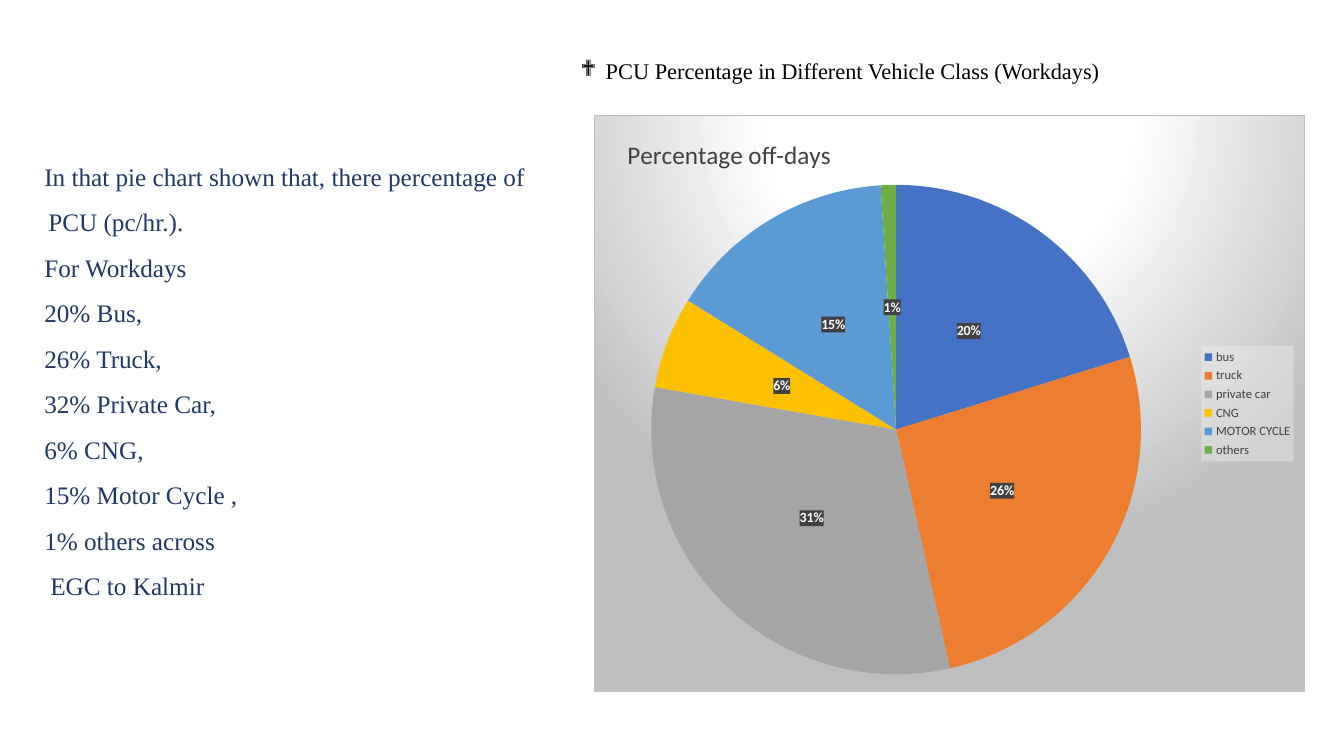
from lxml.etree import fromstring, SubElement
from pptx import Presentation
from pptx.chart.data import CategoryChartData
from pptx.dml.color import RGBColor
from pptx.enum.chart import XL_CHART_TYPE, XL_LABEL_POSITION, XL_LEGEND_POSITION
from pptx.oxml.ns import nsdecls, qn
from pptx.util import Inches, Pt

BLACK = RGBColor(0x00, 0x00, 0x00)
WHITE = RGBColor(0xFF, 0xFF, 0xFF)
NAVY = RGBColor(0x20, 0x38, 0x64)
DARK_GRAY = RGBColor(0x40, 0x40, 0x40)
LIGHT_GRAY = RGBColor(0xF2, 0xF2, 0xF2)
SILVER = RGBColor(0xBF, 0xBF, 0xBF)

# Vehicle class, share in percent, slice colour
VEHICLES = [
    ("bus", 20, RGBColor(0x44, 0x72, 0xC4)),
    ("truck", 26, RGBColor(0xED, 0x7D, 0x31)),
    ("private car", 31, RGBColor(0xA5, 0xA5, 0xA5)),
    ("CNG", 6, RGBColor(0xFF, 0xC0, 0x00)),
    ("MOTOR CYCLE", 15, RGBColor(0x5B, 0x9B, 0xD5)),
    ("others", 1, RGBColor(0x70, 0xAD, 0x47)),
]
FINDINGS = [
    "In that pie chart shown that, there percentage of PCU (pc/hr.).",
    "For Workdays", "20% Bus,", "26% Truck,", "32% Private Car,", "6% CNG,",
    "15% Motor Cycle ,", "1% others across", "EGC to Kalmir",
]


def set_format(target, values):
    for name, value in values.items():
        if name == "color":
            target.color.rgb = value
        else:
            setattr(target, name, value)


def solid_fill(color, alpha):
    """Shape properties with a see-through fill; alpha in percent."""
    return fromstring(
        f'<c:spPr {nsdecls("c", "a")}><a:solidFill><a:srgbClr val="{color}">'
        f'<a:alpha val="{alpha * 1000}"/></a:srgbClr></a:solidFill></c:spPr>')


def glow_fill():
    """Shape properties with a round gradient and a thin border."""
    stops = "".join(
        f'<a:gs pos="{share * 1000}"><a:srgbClr val="{color}"/></a:gs>'
        for share, color in ((0, WHITE), (39, WHITE), (100, SILVER)))
    return fromstring(
        f'<c:spPr {nsdecls("c", "a")}><a:gradFill><a:gsLst>{stops}</a:gsLst>'
        '<a:path path="circle"><a:fillToRect l="50000" t="-80000" r="50000" b="180000"/>'
        f'</a:path></a:gradFill><a:ln w="{Pt(0.75)}"><a:solidFill>'
        f'<a:srgbClr val="{SILVER}"/></a:solidFill></a:ln></c:spPr>')


def set_layout(parent, index, inner=False, **shares):
    """Place a chart part by shares of the chart's size."""
    old = parent.find(qn("c:layout"))
    if old is not None:
        parent.remove(old)
    entries = [("layoutTarget", "inner")] if inner else []
    entries += [("xMode", "edge"), ("yMode", "edge"), *shares.items()]
    body = "".join(f'<c:{name} val="{value}"/>' for name, value in entries)
    parent.insert(index, fromstring(
        f'<c:layout {nsdecls("c")}><c:manualLayout>{body}</c:manualLayout></c:layout>'))


class SlideBuilder:
    body_font = "Times New Roman"
    chart_font = "Calibri"

    def __init__(self, presentation):
        self.width = presentation.slide_width
        self.height = presentation.slide_height
        self.slide = presentation.slides.add_slide(presentation.slide_layouts[6])

    def place(self, left, top, width, height):
        """Turn percentages of the slide into lengths."""
        return (round(self.width * left / 100), round(self.height * top / 100),
                round(self.width * width / 100), round(self.height * height / 100))

    def add_text(self, area, lines, font, spacing, indents, bullet=None, space=0):
        """Add a text box; indents holds margin and first-line indent per line."""
        frame = self.slide.shapes.add_textbox(*self.place(*area)).text_frame
        frame.word_wrap = True
        for number, (line, (margin, indent)) in enumerate(zip(lines, indents)):
            paragraph = frame.paragraphs[0] if number == 0 else frame.add_paragraph()
            properties = paragraph._p.get_or_add_pPr()
            properties.set("marL", str(Inches(margin)))
            properties.set("indent", str(Inches(indent)))
            if bullet:
                SubElement(properties, qn("a:buFont"), typeface="Wingdings")
                SubElement(properties, qn("a:buChar"), char=bullet)
            set_format(paragraph, {"line_spacing": spacing,
                                   "space_before": Pt(space if number else 0)})
            run = paragraph.add_run()
            run.text = line
            set_format(run.font, {"name": self.body_font, **font})

    def add_pie(self, area, title, rows):
        data = CategoryChartData()
        data.categories = [name for name, _, _ in rows]
        data.add_series("Series 1", [value for _, value, _ in rows])
        chart = self.slide.shapes.add_chart(
            XL_CHART_TYPE.PIE, *self.place(*area), data).chart
        set_format(chart.font, {"name": self.chart_font, "size": Pt(10), "color": BLACK})
        chart_element = chart._chartSpace.find(qn("c:chart"))
        chart_element.addnext(glow_fill())

        # Title
        chart.has_title = True
        paragraph = chart.chart_title.text_frame.paragraphs[0]
        run = paragraph.add_run()
        run.text = title
        set_format(run.font, {"name": self.chart_font, "size": Pt(18),
                              "bold": False, "color": DARK_GRAY})
        set_layout(chart_element.find(qn("c:title")), 1, x=0.04, y=0.03)

        # Slices
        plot = chart.plots[0]
        plot.vary_by_categories = True
        for number, (_, _, color) in enumerate(rows):
            fill = plot.series[0].points[number].format.fill
            fill.solid()
            fill.fore_color.rgb = color
        set_layout(chart_element.find(qn("c:plotArea")), 0, inner=True,
                   x=0.08, y=0.12, w=0.69, h=0.85)

        # Slice labels
        labels = plot.series[0].data_labels
        set_format(labels, {"show_percentage": True, "show_value": False,
                            "number_format": "0%", "number_format_is_linked": False,
                            "position": XL_LABEL_POSITION.CENTER})
        set_format(labels.font, {"name": self.chart_font, "size": Pt(10),
                                 "bold": True, "color": WHITE})
        labels._element.find(qn("c:txPr")).addprevious(solid_fill(DARK_GRAY, 90))

        # Legend
        chart.has_legend = True
        legend = chart.legend
        set_format(legend, {"position": XL_LEGEND_POSITION.RIGHT,
                            "include_in_layout": False})
        set_format(legend.font, {"name": self.chart_font, "size": Pt(9),
                                 "color": DARK_GRAY})
        legend._element.find(qn("c:txPr")).addprevious(solid_fill(LIGHT_GRAY, 39))
        set_layout(legend._element, 1, x=0.855, y=0.4, w=0.13, h=0.2)


def main():
    presentation = Presentation()
    presentation.slide_width = Inches(13.33)
    presentation.slide_height = Inches(7.5)
    builder = SlideBuilder(presentation)

    # Heading
    builder.add_text((42.46, 7.33, 49.59, 8.8),
                     ["PCU Percentage in Different Vehicle Class (Workdays)"],
                     {"size": Pt(16), "color": BLACK}, 0.9, [(0.25, -0.25)], "❖")

    # Findings, the last line set in a little
    indents = [(0.23, -0.04)] * (len(FINDINGS) - 1) + [(0.23, 0.02)]
    builder.add_text((1.13, 18.67, 41.34, 61.2), FINDINGS,
                     {"size": Pt(18), "color": NAVY}, 1.5, indents, space=0.1)

    # Pie chart
    builder.add_pie((44.19, 15.2, 52.89, 76.4), "Percentage off-days", VEHICLES)

    presentation.save("out.pptx")


if __name__ == "__main__":
    main()
